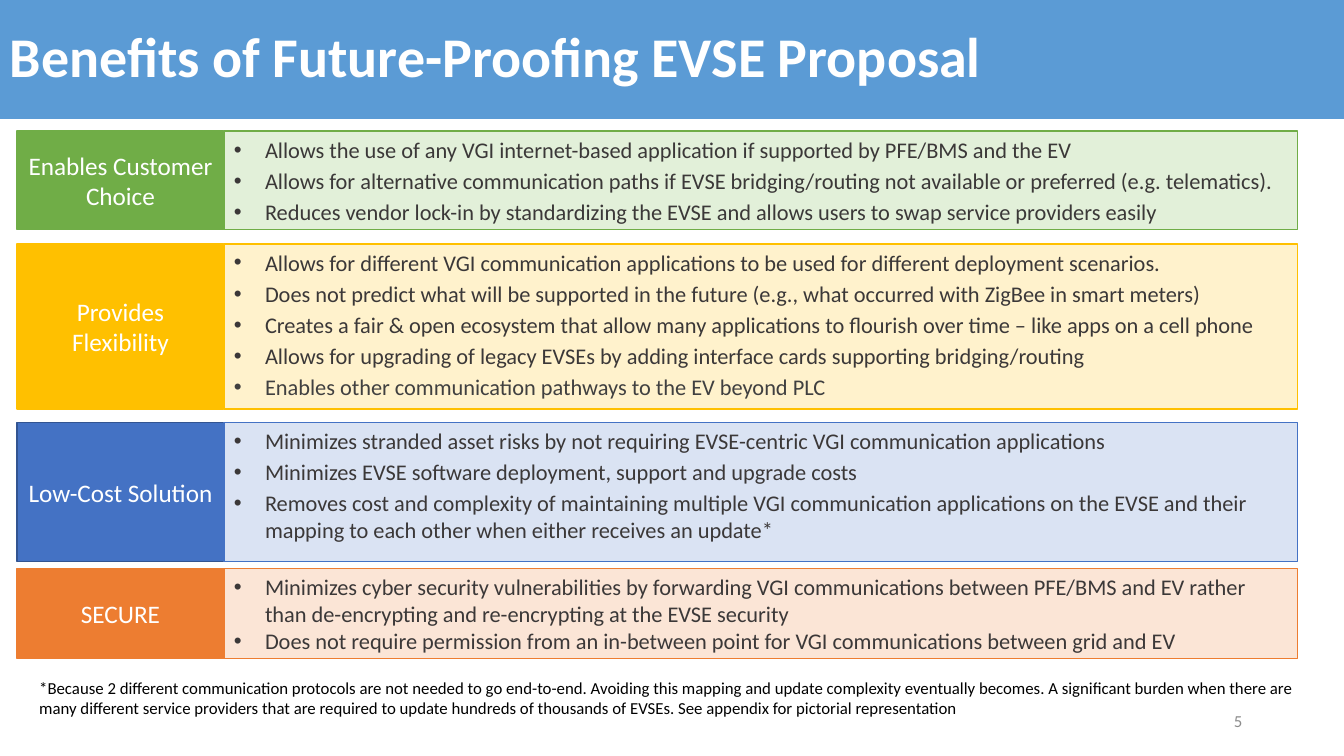
from lxml.etree import SubElement
from pptx import Presentation
from pptx.dml.color import RGBColor
from pptx.enum.shapes import MSO_SHAPE
from pptx.enum.text import MSO_ANCHOR, PP_ALIGN
from pptx.oxml.ns import qn
from pptx.util import Pt

PX = 9144  # EMU per px, 100 px to the inch
WHITE = RGBColor(0xFF, 0xFF, 0xFF)
BLACK = RGBColor(0x00, 0x00, 0x00)
GRAY = RGBColor(0x8C, 0x8C, 0x8C)
DARK = RGBColor(0x3B, 0x38, 0x38)
CHARCOAL = RGBColor(0x40, 0x40, 0x40)
SKY = RGBColor(0x5B, 0x9B, 0xD5)
GREEN = RGBColor(0x70, 0xAD, 0x47)
PALE_GREEN = RGBColor(0xE2, 0xF0, 0xD9)
GOLD = RGBColor(0xFF, 0xC0, 0x00)
PALE_GOLD = RGBColor(0xFF, 0xF2, 0xCC)
BLUE = RGBColor(0x44, 0x72, 0xC4)
NAVY = RGBColor(0x32, 0x54, 0x91)
PALE_BLUE = RGBColor(0xDA, 0xE3, 0xF3)
ORANGE = RGBColor(0xED, 0x7D, 0x31)
PALE_ORANGE = RGBColor(0xFB, 0xE5, 0xD6)

LABEL_X, LABEL_W = 17, 205
BODY_X, BODY_W = LABEL_X + LABEL_W, 1065
INDENT = 31

# label, top, height, fill, label line, body fill, space after, bullets
BENEFITS = [
    ("Enables Customer Choice", 130, 98, GREEN, GREEN, PALE_GREEN, 3, [
        "Allows the use of any VGI internet-based application if supported by PFE/BMS and the EV",
        "Allows for alternative communication paths if EVSE bridging/routing not available or preferred (e.g. telematics).",
        "Reduces vendor lock-in by standardizing the EVSE and allows users to swap service providers easily",
    ]),
    ("Provides Flexibility", 242, 164, GOLD, GOLD, PALE_GOLD, 3, [
        "Allows for different VGI communication applications to be used for different deployment scenarios.",
        "Does not predict what will be supported in the future (e.g., what occurred with ZigBee in smart meters)",
        "Creates a fair & open ecosystem that allow many applications to flourish over time – like apps on a cell phone",
        "Allows for upgrading of legacy EVSEs by adding interface cards supporting bridging/routing",
        "Enables other communication pathways to the EV beyond PLC",
    ]),
    ("Low-Cost Solution", 419, 138, BLUE, NAVY, PALE_BLUE, 3, [
        "Minimizes stranded asset risks by not requiring EVSE-centric VGI communication applications",
        "Minimizes EVSE software deployment, support and upgrade costs",
        "Removes cost and complexity of maintaining multiple VGI communication applications on the EVSE "
        "and their mapping to each other when either receives an update*",
    ]),
    ("SECURE", 564, 89, ORANGE, ORANGE, PALE_ORANGE, 0, [
        "Minimizes cyber security vulnerabilities by forwarding VGI communications between PFE/BMS and EV "
        "rather than de-encrypting and re-encrypting at the EVSE security",
        "Does not require permission from an in-between point for VGI communications between grid and EV",
    ]),
]

prs = Presentation()
prs.slide_width, prs.slide_height = 1333 * PX, 750 * PX
s = prs.slides.add_slide(prs.slide_layouts[6])


def add_box(x, y, w, h, fill=None, line=None, anchor=MSO_ANCHOR.MIDDLE):
    """Add a rectangle, or a text box when there is no fill; return its text frame."""
    box = [v * PX for v in (x, y, w, h)]
    if fill is None:
        sp = s.shapes.add_textbox(*box)
    else:
        sp = s.shapes.add_shape(MSO_SHAPE.RECTANGLE, *box)
        sp.shadow.inherit = False
        sp.fill.solid()
        sp.fill.fore_color.rgb = fill
        if line is None:
            sp.line.fill.background()
        else:
            sp.line.color.rgb = line
            sp.line.width = Pt(1)
    tf = sp.text_frame
    tf.word_wrap = True
    tf.vertical_anchor = anchor
    return tf


def write(p, text, size, color, align=PP_ALIGN.LEFT, bold=False):
    p.alignment = align
    r = p.add_run()
    r.text = text
    r.font.color.rgb = color
    for name, value in {"name": "Calibri", "size": Pt(size), "bold": bold}.items():
        setattr(r.font, name, value)


p = add_box(0, 0, 1333, 118, SKY).paragraphs[0]
p.line_spacing = 0.9
write(p, "Benefits of Future-Proofing EVSE Proposal", 40, WHITE, bold=True)

p = add_box(942, 695, 300, 40).paragraphs[0]
write(p, "5", 12, GRAY, PP_ALIGN.RIGHT)

for label, top, height, fill, edge, pale, gap, bullets in BENEFITS:
    tf = add_box(LABEL_X, top, LABEL_W, height, fill, edge)
    write(tf.paragraphs[0], label, 18, WHITE, PP_ALIGN.CENTER)

    tf = add_box(BODY_X, top, BODY_W, height, pale, fill, MSO_ANCHOR.TOP)
    for i, text in enumerate(bullets):
        p = tf.add_paragraph() if i else tf.paragraphs[0]
        p.space_after = Pt(gap)
        write(p, text, 16, CHARCOAL if text.endswith("PLC") else DARK)
        pPr = p._p.get_or_add_pPr()
        pPr.set("marL", str(INDENT * PX))
        pPr.set("indent", str(-INDENT * PX))
        SubElement(pPr, qn("a:buFont")).set("typeface", "Arial")
        SubElement(pPr, qn("a:buChar")).set("char", "•")

p = add_box(17, 667, 1289, 50, anchor=MSO_ANCHOR.TOP).paragraphs[0]
write(p, "*Because 2 different communication protocols are not needed to go end-to-end. "
      "Avoiding this mapping and update complexity eventually becomes. A significant burden "
      "when there are many different service providers that are required to update hundreds "
      "of thousands of EVSEs. See appendix for pictorial representation", 12, BLACK)
p._p.get_or_add_pPr().set("marL", str(12 * PX))

prs.save("out.pptx")
